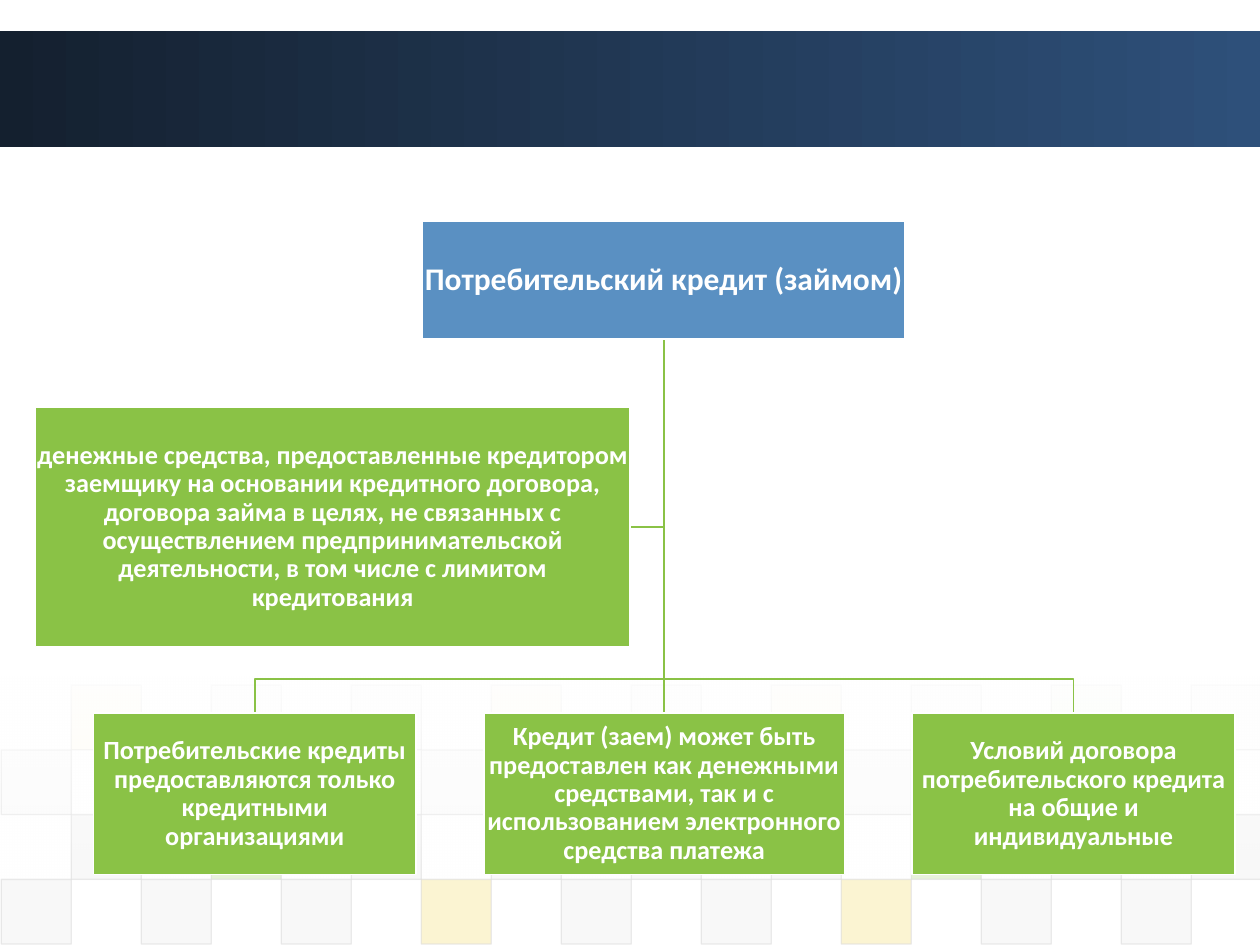
from dataclasses import dataclass

from lxml.etree import SubElement
from pptx import Presentation
from pptx.dml.color import RGBColor
from pptx.enum.shapes import MSO_CONNECTOR, MSO_SHAPE
from pptx.enum.text import MSO_ANCHOR, PP_ALIGN
from pptx.oxml.ns import qn
from pptx.util import Pt


@dataclass(frozen=True)
class Theme:
    font: str = "Calibri"
    white: str = "FFFFFF"
    blue: str = "5A90C2"
    green: str = "8AC246"
    yellow: str = "EFC821"
    grey: str = "DDDDDD"
    pale: str = "EAEAEA"
    band_start: str = "14202F"
    band_end: str = "2E507A"
    root_size: float = 18
    node_size: float = 15
    line_width: float = 1
    tile_line: float = 0.75


@dataclass(frozen=True)
class Box:
    left: float
    top: float
    width: float
    height: float

    @property
    def right(self):
        return self.left + self.width

    @property
    def bottom(self):
        return self.top + self.height

    @property
    def center(self):
        return self.left + self.width / 2

    @property
    def middle(self):
        return self.top + self.height / 2


THEME = Theme()
SLIDE = Box(0, 0, 720, 540)
TILE_COLORS = {"g": THEME.grey, "p": THEME.pale, "y": THEME.yellow, "l": THEME.green}
# Each row: opacity in percent, then one letter per column (a dot is an empty cell)
TILE_ROWS = [
    (5, ".y.p.p.y.g.y.p.l.p"),
    (10, "g.....g.....g....."),
    (20, ".g.l.g.g.g.g.l.g.g"),
    (20, "g.g.g.y.g.g.y.g.g."),
]
ROOT_TEXT = "Потребительский кредит (займом)"
NOTE_TEXT = (
    "денежные средства, предоставленные кредитором заемщику на основании "
    "кредитного договора, договора займа в целях, не связанных с осуществлением "
    "предпринимательской деятельности, в том числе с лимитом кредитования"
)
# Each branch: box width and text
BRANCHES = [
    (184.4, "Потребительские кредиты предоставляются только кредитными организациями"),
    (206, "Кредит (заем) может быть предоставлен как денежными средствами, "
          "так и с использованием электронного средства платежа"),
    (184.4, "Условий договора потребительского кредита на общие и индивидуальные"),
]


def color(value):
    return RGBColor.from_string(value)


def set_opacity(element, *percents):
    """Give the colours inside element, in order, these opacities."""
    for node, percent in zip(list(element.iter(qn("a:srgbClr"))), percents):
        SubElement(node, qn("a:alpha"), val=str(percent * 1000))


def add_rectangle(slide, box, fill=None, line=None, line_width=THEME.line_width):
    shape = slide.shapes.add_shape(
        MSO_SHAPE.RECTANGLE, Pt(box.left), Pt(box.top), Pt(box.width), Pt(box.height))
    shape.shadow.inherit = False
    if fill:
        shape.fill.solid()
        shape.fill.fore_color.rgb = color(fill)
    if line:
        shape.line.color.rgb = color(line)
        shape.line.width = Pt(line_width)
    else:
        shape.line.fill.background()
    return shape


def add_gradient(slide, box, start, end, angle):
    shape = add_rectangle(slide, box)
    shape.fill.gradient()
    shape.fill.gradient_angle = angle
    for stop, value, position in zip(shape.fill.gradient_stops, (start, end), (0, 1)):
        stop.color.rgb = color(value)
        stop.position = position
    return shape


def write_text(shape, text, size, font=THEME.font, fill=THEME.white, bold=True):
    frame = shape.text_frame
    frame.word_wrap = True
    frame.vertical_anchor = MSO_ANCHOR.MIDDLE
    frame.margin_left = frame.margin_right = Pt(0.75)
    frame.margin_top = frame.margin_bottom = Pt(0.75)
    paragraph = frame.paragraphs[0]
    paragraph.alignment = PP_ALIGN.CENTER
    paragraph.line_spacing = 0.9
    run = paragraph.add_run()
    run.text = text
    run.font.name = font
    run.font.size = Pt(size)
    run.font.bold = bold
    run.font.color.rgb = color(fill)


def add_node(slide, box, text, fill=THEME.green, size=THEME.node_size):
    write_text(add_rectangle(slide, box, fill, THEME.white), text, size)


def add_link(slide, points):
    """Draw a straight connector for two points, an open elbow for more."""
    points = [(Pt(x), Pt(y)) for x, y in points]
    if len(points) == 2:
        link = slide.shapes.add_connector(MSO_CONNECTOR.STRAIGHT, *points[0], *points[1])
        SubElement(link._element.spPr, qn("a:effectLst"))
    else:
        builder = slide.shapes.build_freeform(*points[0], scale=1.0)
        builder.add_line_segments(points[1:], close=False)
        link = builder.convert_to_shape()
        link.shadow.inherit = False
        link.fill.background()
    link.line.color.rgb = color(THEME.green)
    link.line.width = Pt(THEME.line_width)


def add_tiles(slide, box):
    width = box.width / len(TILE_ROWS[0][1])
    height = box.height / len(TILE_ROWS)
    for row, (opacity, cells) in enumerate(TILE_ROWS):
        for column, cell in enumerate(cells):
            if cell in TILE_COLORS:
                place = Box(box.left + column * width, box.top + row * height, width, height)
                tile = add_rectangle(
                    slide, place, TILE_COLORS[cell], THEME.grey, THEME.tile_line)
                set_opacity(tile._element.spPr, opacity, 60)


def add_background(slide, box):
    add_gradient(slide, Box(box.left, box.top + 18, box.width, 66),
                 THEME.band_start, THEME.band_end, 0)
    add_tiles(slide, Box(box.left + 0.7, box.bottom - 148.5, box.width, 148))
    fade = add_gradient(slide, Box(box.left, box.bottom - 153.4, box.width, 116.6),
                        THEME.white, THEME.white, 270)
    set_opacity(fade._element.spPr, 90, 0)


def add_chart_tree(slide, box):
    """Place the root, its side note and the row of branches."""
    root = Box(box.left + 221.2, box.top, 275.8, 67)
    note = Box(box.left, box.top + 106, 339.8, 136.8)
    row_left, row_height = box.left + 33.2, 92.2
    gap = (box.right - row_left - sum(width for width, _ in BRANCHES)) / (len(BRANCHES) - 1)
    branches = []
    for width, _ in BRANCHES:
        left = branches[-1].right + gap if branches else row_left
        branches.append(Box(left, box.bottom - row_height, width, row_height))

    start = (root.center, root.bottom)
    add_link(slide, [start, (root.center, note.middle), (note.right, note.middle)])
    for index, branch in enumerate(branches):
        end_x, bend = branch.center, branch.top - 19.4
        if index == len(branches) // 2:
            add_link(slide, [start, (root.center, branch.top)])
        else:
            add_link(slide, [start, (root.center, bend), (end_x, bend), (end_x, branch.top)])

    add_node(slide, root, ROOT_TEXT, THEME.blue, THEME.root_size)
    for branch, (_, text) in zip(branches, BRANCHES):
        add_node(slide, branch, text)
    add_node(slide, note, NOTE_TEXT)


def main():
    presentation = Presentation()
    presentation.slide_width, presentation.slide_height = Pt(SLIDE.width), Pt(SLIDE.height)
    slide = presentation.slides.add_slide(presentation.slide_layouts[6])
    add_background(slide, SLIDE)
    add_chart_tree(slide, Box(20.2, 126.6, 685.5, 373.2))
    presentation.save("out.pptx")


if __name__ == "__main__":
    main()
